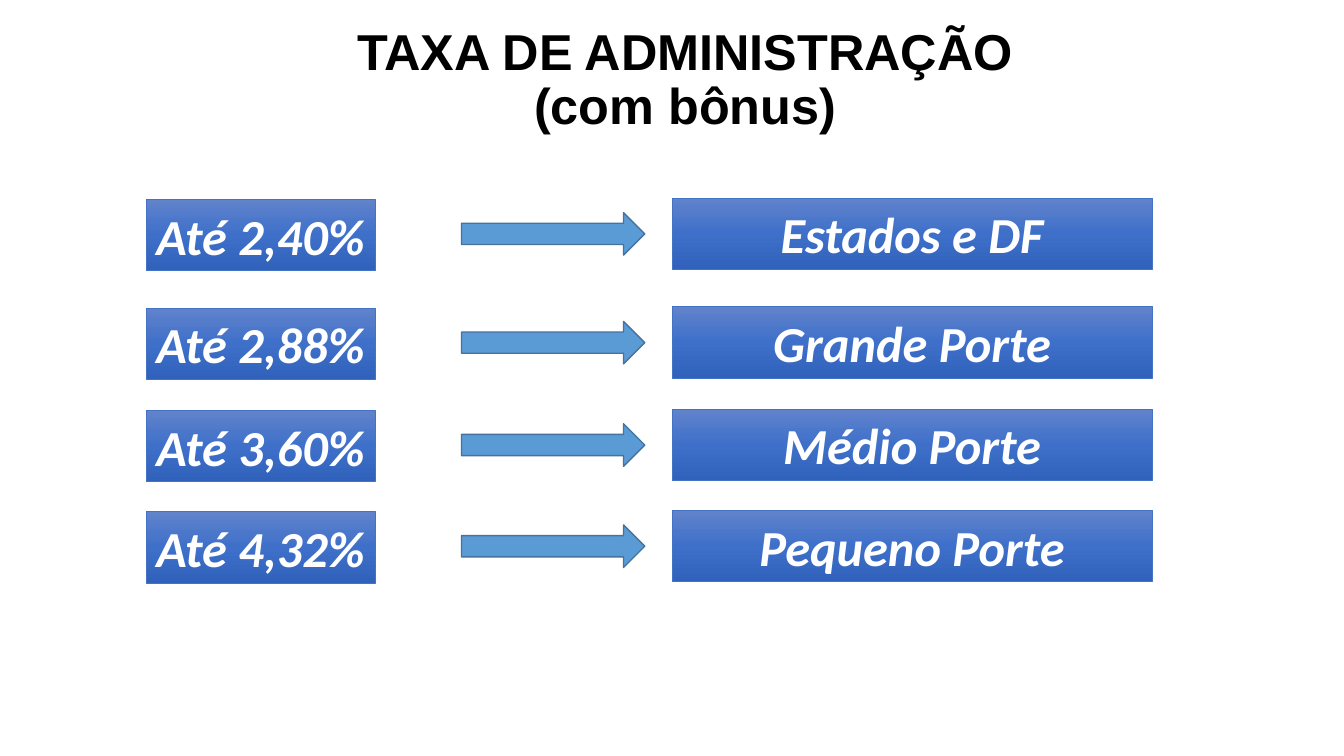
from copy import deepcopy

from pptx import Presentation
from pptx.dml.color import RGBColor
from pptx.enum.shapes import MSO_SHAPE as SHAPE
from pptx.enum.text import MSO_ANCHOR as ANCHOR, PP_ALIGN as ALIGN
from pptx.util import Cm, Pt


def rgb(value):
    return RGBColor.from_string(value)


class FeeSlide:
    size = 36
    gradient = [(0, "6183CB"), (0.5, "3E70CA"), (1, "3062BB")]

    def __init__(self, prs):
        self.slide = prs.slides.add_slide(prs.slide_layouts[6])

    def set_text(self, tf, text, font, color, italic=False, spacing=1.0):
        tf.text = text
        tf.word_wrap = True
        tf.vertical_anchor = ANCHOR.MIDDLE
        for p in tf.paragraphs:
            p.alignment = ALIGN.CENTER
            p.line_spacing = spacing
            for r in p.runs:
                r.font.name = font
                r.font.size = Pt(self.size)
                r.font.bold = True
                r.font.italic = italic
                r.font.color.rgb = rgb(color)

    def title(self, text, x, y, w, h):
        box = self.slide.shapes.add_textbox(Cm(x), Cm(y), Cm(w), Cm(h))
        self.set_text(box.text_frame, text, "Arial", "000000", spacing=0.9)

    def shape(self, kind, x, y, w, h, line, width):
        sp = self.slide.shapes.add_shape(kind, Cm(x), Cm(y), Cm(w), Cm(h))
        sp.shadow.inherit = False
        sp.line.color.rgb = rgb(line)
        sp.line.width = Pt(width)
        return sp

    def box(self, text, x, y, w, h):
        sp = self.shape(SHAPE.RECTANGLE, x, y, w, h, "4472C4", 0.5)
        sp.fill.gradient()
        sp.fill.gradient_angle = 270
        stops = sp._element.spPr.xpath("./a:gradFill/a:gsLst")[0]
        stops.append(deepcopy(stops[-1]))
        for stop, (position, color) in zip(sp.fill.gradient_stops, self.gradient):
            stop.position = position
            stop.color.rgb = rgb(color)
        tf = sp.text_frame
        tf.margin_left = tf.margin_right = Cm(0.1)
        self.set_text(tf, text, "Calibri", "FFFFFF", italic=True)

    def arrow(self, x, y, w, h):
        sp = self.shape(SHAPE.RIGHT_ARROW, x, y, w, h, "43739E", 1)
        sp.fill.solid()
        sp.fill.fore_color.rgb = rgb("5B9BD5")


def main():
    prs = Presentation()
    prs.slide_width, prs.slide_height = Cm(33.87), Cm(19.05)
    s = FeeSlide(prs)
    s.title("TAXA DE ADMINISTRAÇÃO\n(com bônus)", 5.51, 0.53, 23.52, 3.02)
    rows = [
        (5.02, "Até 2,40%", "Estados e DF"),
        (7.76, "Até 2,88%", "Grande Porte"),
        (10.34, "Até 3,60%", "Médio Porte"),
        (12.89, "Até 4,32%", "Pequeno Porte"),
    ]
    for top, rate, category in rows:
        s.box(rate, 3.68, top, 5.77, 1.8)
        s.arrow(11.63, top + 0.34, 4.62, 1.07)
        s.box(category, 16.94, top - 0.03, 12.09, 1.8)
    prs.save("out.pptx")


if __name__ == "__main__":
    main()
